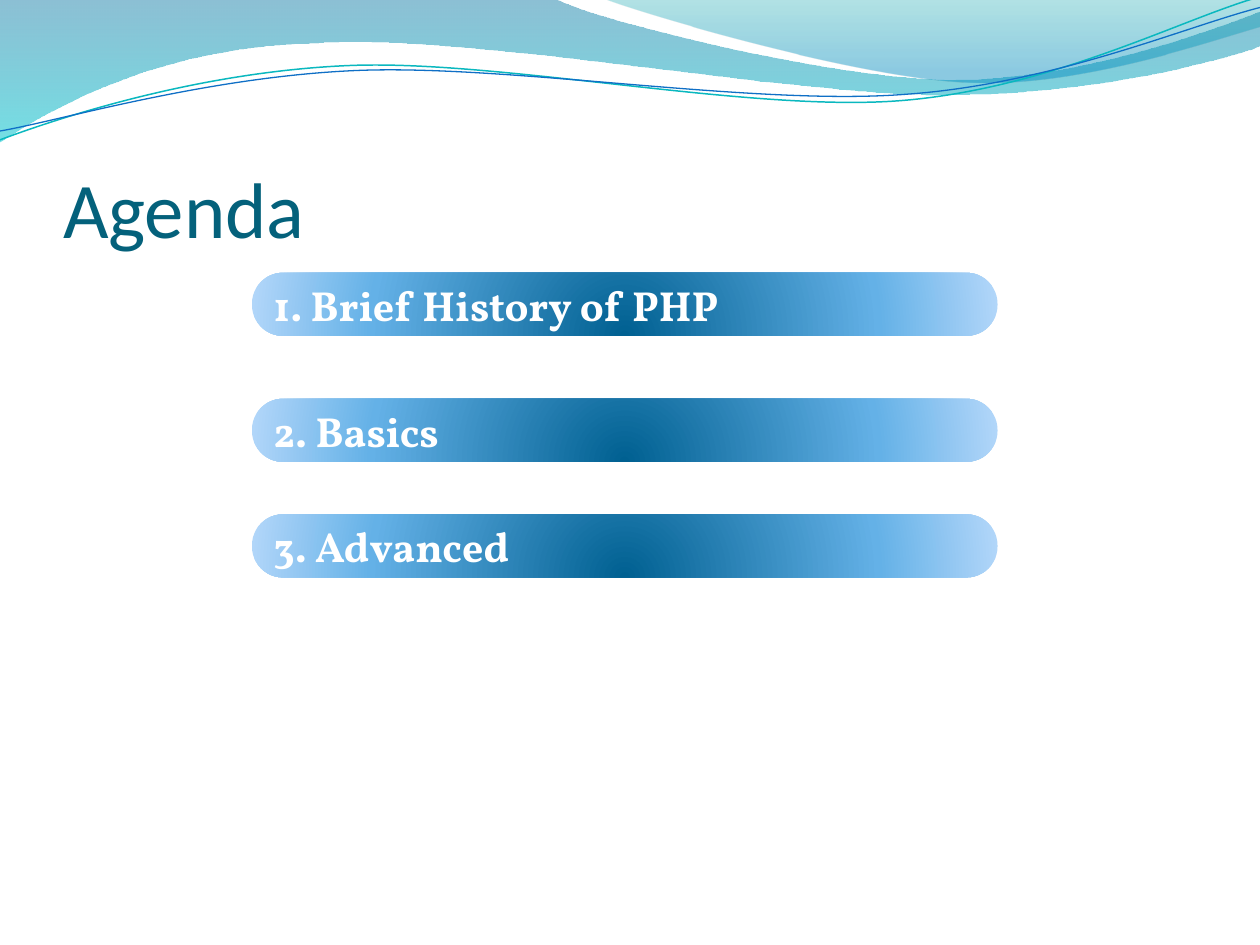
from dataclasses import dataclass
from math import cos, radians, sin
from typing import Optional

from lxml.etree import SubElement
from pptx import Presentation
from pptx.dml.color import RGBColor
from pptx.enum.shapes import MSO_SHAPE
from pptx.enum.text import MSO_ANCHOR, MSO_AUTO_SIZE, PP_ALIGN
from pptx.oxml.ns import qn
from pptx.util import Cm, Pt

COLORS = {
    "title": "04617B", "white": "FFFFFF",
    "wave_top": "0074A1", "wave_low": "00C6CF",
    "crest_top": "00A1A9", "crest_low": "008BBF",
    "teal_line": "0AB8BF", "blue_line": "0F6FC6",
    "bar_core": "006091", "bar_mid": "64B1E7", "bar_edge": "B1D6F9",
}
UNIT = 2.54  # cm per unit of the wave coordinates
TILT = -2.7  # rotation of the line waves in degrees


@dataclass
class Stop:
    pos: int
    color: str
    opacity: int = 100


@dataclass
class Wave:
    start: tuple
    segments: list  # (x, y) is a line, six numbers are a cubic curve
    stops: Optional[list] = None
    line: Optional[str] = None
    width: float = 0
    center: Optional[tuple] = None  # the point a tilted wave turns about


@dataclass
class Bar:
    text: str
    top: float


WAVES = [
    Wave((0, 0), [
        (4.4, -0.01), (4.76, 0.17, 6.64, 0.63, 7.58, 0.63),
        (8.53, 0.63, 9.58, 0.26, 10, 0.09), (10.01, 0.36),
        (9.83, 0.44, 8.7, 0.76, 7.46, 0.75),
        (6.22, 0.75, 3.82, 0.28, 2.57, 0.34),
        (1.29, 0.36, 0.46, 0.83, -0.01, 1.13), (0, 0),
    ], stops=[Stop(0, "wave_top", 45), Stop(100, "wave_low", 55)]),
    Wave((4.79, -0.01), [
        (5.09, 0.11, 6.82, 0.62, 7.69, 0.65),
        (8.56, 0.69, 9.61, 0.32, 10, 0.21), (10, 0), (4.79, -0.01),
    ], stops=[Stop(0, "crest_top", 30), Stop(80, "crest_low", 45)]),
    Wave((0, 1.11), [
        (0.48, 0.93, 1.58, 0.57, 2.77, 0.52),
        (3.95, 0.47, 5.93, 0.89, 7.13, 0.8),
        (8.33, 0.71, 9.38, 0.15, 9.98, -0.02),
    ], line="teal_line", width=0.85, center=(4.99, 0.58)),
    Wave((0, 1.04), [
        (0.47, 0.96, 1.64, 0.61, 2.83, 0.56),
        (4.03, 0.51, 5.97, 0.84, 7.17, 0.75),
        (8.36, 0.67, 9.41, 0.21, 10, 0.06),
    ], line="blue_line", width=0.75, center=(5, 0.59)),
]
BARS = [Bar("1. Brief History of PHP", 5.5), Bar("2. Basics", 8.04),
        Bar("3. Advanced", 10.37)]
BAR_STOPS = [Stop(0, "bar_core"), Stop(68, "bar_mid"), Stop(100, "bar_edge")]


def rgb(name: str) -> RGBColor:
    return RGBColor.from_string(COLORS[name])


def set_gradient(sp, stops: list, radial: bool = False) -> None:
    """Fill from top to bottom, or outward from the centre."""
    sp.fill.gradient()
    grad = sp.element.spPr.find(qn("a:gradFill"))
    for child in list(grad):
        grad.remove(child)
    gs_list = SubElement(grad, qn("a:gsLst"))
    for stop in stops:
        gs = SubElement(gs_list, qn("a:gs"), pos=str(stop.pos * 1000))
        clr = SubElement(gs, qn("a:srgbClr"), val=COLORS[stop.color])
        if stop.opacity < 100:
            SubElement(clr, qn("a:alpha"), val=str(stop.opacity * 1000))
    if radial:
        circle = SubElement(grad, qn("a:path"), {"path": "circle"})
        SubElement(circle, qn("a:fillToRect"),
                   l="50000", t="130000", r="50000", b="-30000")
    else:
        SubElement(grad, qn("a:lin"), ang="5400000", scaled="1")


def level(point: tuple, center: tuple) -> tuple:
    """Undo the tilt of a point, as the shape itself is rotated."""
    dx, dy = point[0] - center[0], point[1] - center[1]
    a = radians(-TILT)
    return (center[0] + dx * cos(a) - dy * sin(a),
            center[1] + dx * sin(a) + dy * cos(a))


def bend(sp, segments: list) -> None:
    """Join each three line ends that describe a curve into one curve."""
    ends = iter(list(sp.element.iter(qn("a:lnTo"))))
    for seg in segments:
        first = next(ends)
        if len(seg) == 6:
            first.tag = qn("a:cubicBezTo")
            for _ in range(2):
                other = next(ends)
                first.append(other[0])
                other.getparent().remove(other)


def draw_wave(s, wave: Wave) -> None:
    points = [wave.start]
    for seg in wave.segments:
        points += zip(seg[::2], seg[1::2])
    if wave.center:
        points = [level(point, wave.center) for point in points]
    points = [(Cm(x * UNIT), Cm(y * UNIT)) for x, y in points]
    builder = s.shapes.build_freeform(*points[0])
    builder.add_line_segments(points[1:], close=wave.stops is not None)
    sp = builder.convert_to_shape()
    bend(sp, wave.segments)
    sp.shadow.inherit = False
    if wave.stops:
        set_gradient(sp, wave.stops)
        sp.line.fill.background()
    else:
        sp.rotation = TILT
        sp.fill.background()
        sp.line.color.rgb = rgb(wave.line)
        sp.line.width = Pt(wave.width)


def add_text(p, text: str, font: str, size: int, color: str,
             bold: bool = False) -> None:
    p.alignment = PP_ALIGN.LEFT
    r = p.add_run()
    r.text = text
    r.font.name, r.font.size, r.font.bold = font, Pt(size), bold
    r.font.color.rgb = rgb(color)


def draw_bar(s, bar: Bar) -> None:
    sp = s.shapes.add_shape(MSO_SHAPE.ROUNDED_RECTANGLE,
                            Cm(5.08), Cm(bar.top), Cm(15.03), Cm(1.27))
    sp.adjustments[0] = 0.49
    sp.shadow.inherit = False
    set_gradient(sp, BAR_STOPS, radial=True)
    sp.line.fill.background()
    tf = sp.text_frame
    tf.word_wrap = False
    tf.vertical_anchor = MSO_ANCHOR.MIDDLE
    add_text(tf.paragraphs[0], bar.text, "Vollkorn", 24, "white", bold=True)


def draw_title(s, text: str) -> None:
    title = s.shapes.title
    title.left, title.top = Cm(1.27), Cm(1.95)
    title.width, title.height = Cm(23.06), Cm(3.17)
    tf = title.text_frame
    tf.margin_left = tf.margin_right = tf.margin_bottom = 0
    tf.margin_top = Cm(0.13)
    tf.word_wrap = True
    tf.auto_size = MSO_AUTO_SIZE.NONE
    tf.vertical_anchor = MSO_ANCHOR.BOTTOM
    add_text(tf.paragraphs[0], text, "Calibri", 45, "title")
    # Bring the title in front of the waves
    title.element.getparent().append(title.element)


def main() -> None:
    prs = Presentation()
    prs.slide_width, prs.slide_height = Cm(25.4), Cm(19.05)
    s = prs.slides.add_slide(prs.slide_layouts[5])
    # Header waves
    for wave in WAVES:
        draw_wave(s, wave)
    # Title and agenda
    draw_title(s, "Agenda")
    for bar in BARS:
        draw_bar(s, bar)
    prs.save("out.pptx")


if __name__ == "__main__":
    main()
